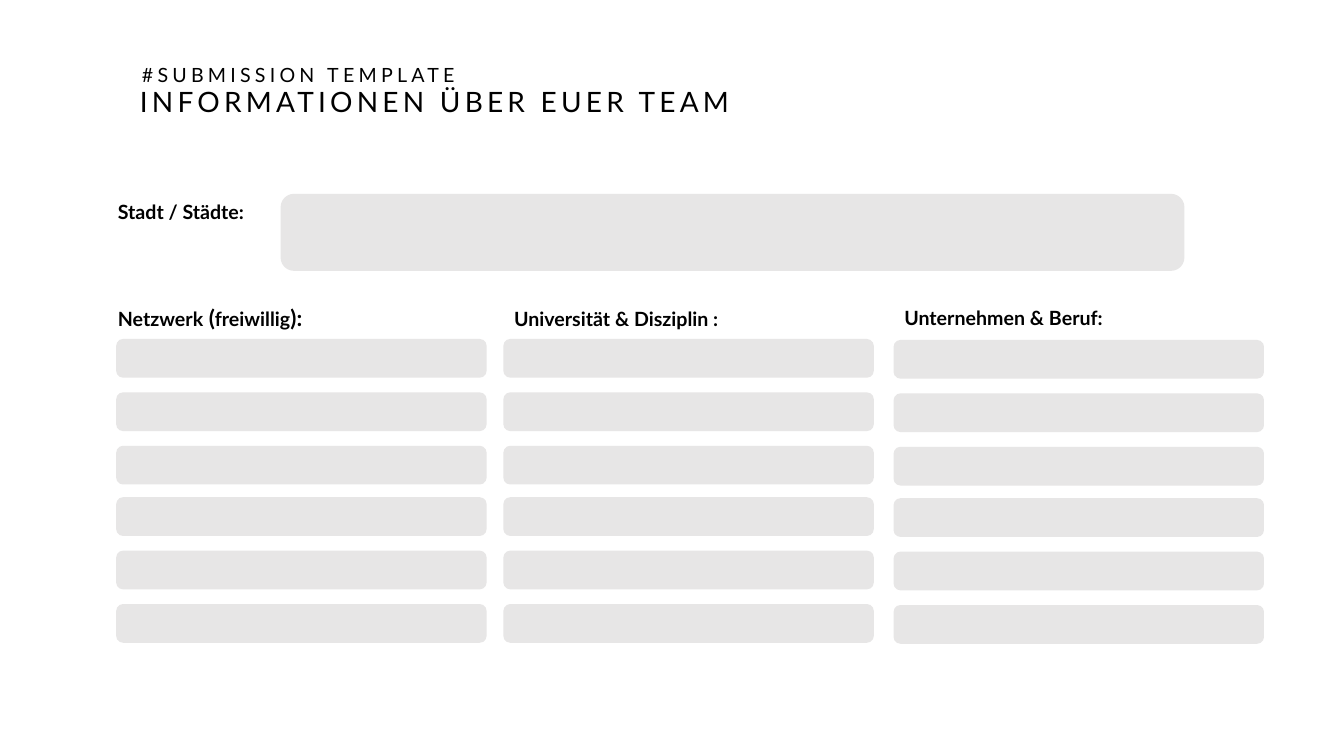
from pptx import Presentation
from pptx.dml.color import RGBColor
from pptx.enum.shapes import MSO_SHAPE
from pptx.util import Inches, Pt

COLORS = {"text": "000000", "field": "E7E6E6", "background": "FFFFFF"}
TITLE = {"name": "Lato", "size": Pt(20), "bold": False}
TAGLINE = {**TITLE, "size": Pt(14)}
LABEL = {**TAGLINE, "bold": True}
LABEL_LARGE = {**LABEL, "size": Pt(16)}

# Content: position (left, top, width, height), letter spacing, runs
TEXTS = [
    ((1.29, 0.79, 11.46, 0.44), 3, [("INFORMATIONEN ÜBER EUER TEAM", TITLE)]),
    ((1.31, 0.58, 11.46, 0.34), 3, [("#SUBMISSION TEMPLATE", TAGLINE)]),
    ((1.07, 1.93, 1.56, 0.34), 0, [("Stadt / Städte:", LABEL)]),
    ((1.07, 2.97, 7.81, 0.37), 0, [("Netzwerk", LABEL), (" (", LABEL_LARGE),
                                   ("freiwillig", LABEL), ("):", LABEL_LARGE)]),
    ((5, 3, 2.72, 0.34), 0, [("Universität & Disziplin :", LABEL)]),
    ((8.87, 2.99, 2.51, 0.34), 0, [("Unternehmen & Beruf:", LABEL)]),
]
CITY_FIELD = (2.79, 1.93, 8.95, 0.75)
COLUMNS = [(1.16, 3.37), (5, 3.37), (8.87, 3.38)]  # left, top of first field
FIELD_WIDTH, FIELD_HEIGHT = 3.66, 0.37
ROW_STEP, GROUP_STEP = 0.53, 1.57  # two groups of three rows
ROWS_PER_GROUP, GROUPS = 3, 2


def add_text(slide, position, spacing, runs):
    box = slide.shapes.add_textbox(*map(Inches, position))
    box.text_frame.word_wrap = True
    paragraph = box.text_frame.paragraphs[0]
    for text, style in runs:
        run = paragraph.add_run()
        run.text = text
        for attribute, value in style.items():
            setattr(run.font, attribute, value)
        run.font.color.rgb = RGBColor.from_string(COLORS["text"])
        if spacing:
            run.font._element.set("spc", str(spacing * 100))


def add_field(slide, position):
    shape = slide.shapes.add_shape(MSO_SHAPE.ROUNDED_RECTANGLE, *map(Inches, position))
    shape.shadow.inherit = False
    color = RGBColor.from_string(COLORS["field"])
    shape.fill.solid()
    shape.fill.fore_color.rgb = color
    shape.line.color.rgb = color
    shape.line.width = Pt(1)


def main():
    presentation = Presentation()
    presentation.slide_width = Inches(13.33)
    presentation.slide_height = Inches(7.5)
    slide = presentation.slides.add_slide(presentation.slide_layouts[6])
    slide.background.fill.solid()
    slide.background.fill.fore_color.rgb = RGBColor.from_string(COLORS["background"])

    # Headings and labels
    for position, spacing, runs in TEXTS:
        add_text(slide, position, spacing, runs)

    # City field and the three columns of team fields
    add_field(slide, CITY_FIELD)
    for left, first_top in COLUMNS:
        for index in range(ROWS_PER_GROUP * GROUPS):
            group, row = divmod(index, ROWS_PER_GROUP)
            top = first_top + group * GROUP_STEP + row * ROW_STEP
            add_field(slide, (left, top, FIELD_WIDTH, FIELD_HEIGHT))

    presentation.save("out.pptx")


if __name__ == "__main__":
    main()
